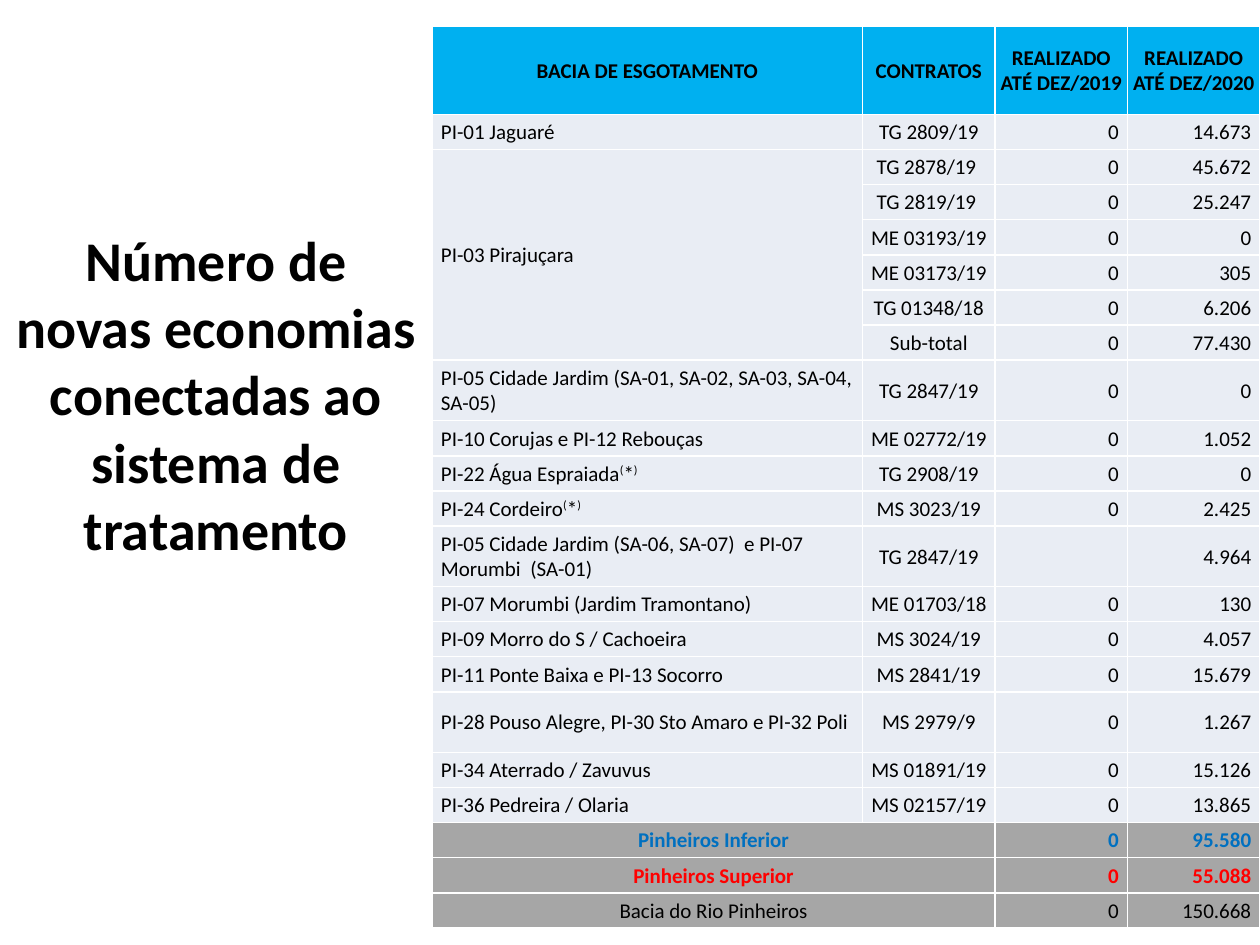
from dataclasses import dataclass
from typing import Any

from lxml.etree import SubElement
from pptx import Presentation
from pptx.dml.color import RGBColor
from pptx.enum.text import MSO_ANCHOR as Anchor, PP_ALIGN as Align
from pptx.oxml.ns import qn
from pptx.util import Emu, Inches, Pt

BLACK, WHITE = "000000", "FFFFFF"
HEADER, BODY, TOTAL = "00B0F0", "E9EDF4", "A6A6A6"
FOOTNOTE = (("(", True), ("*", False), (")", True))

HEADINGS = ("BACIA DE ESGOTAMENTO", "CONTRATOS", "REALIZADO ATÉ DEZ/2019", "REALIZADO ATÉ DEZ/2020")
BASINS = (
    ("PI-01 Jaguaré", "TG 2809/19", "0", "14.673"),
    ("PI-03 Pirajuçara", "TG 2878/19 ", "0", "45.672"),
    ("", "TG 2819/19 ", "0", "25.247"),
    ("", "ME 03193/19", "0", "0"),
    ("", "ME 03173/19", "0", "305"),
    ("", "TG 01348/18", "0", "6.206"),
    ("", "Sub-total", "0", "77.430"),
    ("PI-05 Cidade Jardim (SA-01, SA-02, SA-03, SA-04, SA-05)", "TG 2847/19", "0", "0"),
    ("PI-10 Corujas e PI-12 Rebouças", "ME 02772/19", "0", "1.052"),
    ((("PI-22 Água Espraiada", False), *FOOTNOTE), "TG 2908/19", "0", "0"),
    ((("PI-24 Cordeiro", False), *FOOTNOTE), "MS 3023/19", "0", "2.425"),
    ("PI-05 Cidade Jardim (SA-06, SA-07)  e PI-07 Morumbi  (SA-01)", "TG 2847/19", "", "4.964"),
    ("PI-07 Morumbi (Jardim Tramontano)", "ME 01703/18", "0", "130"),
    ("PI-09 Morro do S / Cachoeira", "MS 3024/19", "0", "4.057"),
    ("PI-11 Ponte Baixa e PI-13 Socorro", "MS 2841/19", "0", "15.679"),
    ("PI-28 Pouso Alegre, PI-30 Sto Amaro e PI-32 Poli", "MS 2979/9", "0", "1.267"),
    ("PI-34 Aterrado / Zavuvus", "MS 01891/19", "0", "15.126"),
    ("PI-36 Pedreira / Olaria", "MS 02157/19", "0", "13.865"),
)
TOTALS = (
    ("Pinheiros Inferior", "", "0", "95.580"),
    ("Pinheiros Superior", "", "0", "55.088"),
    ("Bacia do Rio Pinheiros", "", "0", "150.668"),
)
TOTAL_STYLES = (("0070C0", True), ("FF0000", True), (BLACK, False))
TALL_ROWS = (8, 12, 16)


def color(value):
    return RGBColor.from_string(value)


@dataclass
class SlideBuilder:
    slide: Any
    width: int
    height: int
    font: str = "Calibri"
    body_size: int = 12

    def box(self, left, top, width, height):
        return (Emu(round(left * self.width)), Emu(round(top * self.height)),
                Emu(round(width * self.width)), Emu(round(height * self.height)))

    def add_runs(self, frame, content, size, ink, bold, align):
        paragraph = frame.paragraphs[0]
        paragraph.alignment = align
        paragraph.font.size = Pt(size)
        runs = ((content, False),) if isinstance(content, str) else content
        for words, raised in runs:
            if not words:
                continue
            run = paragraph.add_run()
            run.text = words
            run.font.name, run.font.size, run.font.bold = self.font, Pt(size), bold
            run.font.color.rgb = color(ink)
            if raised:
                run._r.get_or_add_rPr().set("baseline", "30000")

    def title(self, words, area, size):
        frame = self.slide.shapes.add_textbox(*self.box(*area)).text_frame
        frame.word_wrap = True
        frame.vertical_anchor = Anchor.MIDDLE
        self.add_runs(frame, words, size, BLACK, True, Align.CENTER)

    def table(self, area, column_shares, row_weights):
        left, top, width, height = self.box(*area)
        grid = self.slide.shapes.add_table(
            len(row_weights), len(column_shares), left, top, width, height).table
        grid.first_row = grid.horz_banding = False
        for column, share in zip(grid.columns, column_shares):
            column.width = Emu(round(width * share))
        for row, weight in zip(grid.rows, row_weights):
            row.height = Emu(round(height * weight / sum(row_weights)))
        return grid

    def cell(self, cell, content, fill, align, ink=BLACK, bold=False):
        cell.vertical_anchor = Anchor.MIDDLE
        cell.margin_left = Inches(0.07 if align == Align.LEFT else 0.01)
        cell.margin_right = Inches(0.07 if align == Align.RIGHT else 0.01)
        cell.margin_top, cell.margin_bottom = Inches(0.01), 0
        self.add_runs(cell.text_frame, content, self.body_size, ink, bold, align)
        properties = cell._tc.get_or_add_tcPr()
        for side in ("a:lnL", "a:lnR", "a:lnT", "a:lnB"):
            border = SubElement(properties, qn(side), w=str(Pt(1)))
            SubElement(SubElement(border, qn("a:solidFill")), qn("a:srgbClr"), val=WHITE)
        cell.fill.solid()
        cell.fill.fore_color.rgb = color(fill)

    def row(self, grid, index, contents, fill, aligns, ink=BLACK, bold=False):
        for column, (content, align) in enumerate(zip(contents, aligns)):
            self.cell(grid.cell(index, column), content, fill, align, ink, bold)


def main():
    deck = Presentation()
    deck.slide_width, deck.slide_height = Inches(10), Inches(7.5)
    slide = deck.slides.add_slide(deck.slide_layouts[6])
    builder = SlideBuilder(slide, deck.slide_width, deck.slide_height)

    builder.title("Número de novas economias conectadas ao sistema de tratamento",
                  (0, 0.04, 0.343, 0.753), 32)

    row_count = 1 + len(BASINS) + len(TOTALS)
    weights = [2.5] + [1.72 if row in TALL_ROWS else 1 for row in range(1, row_count)]
    grid = builder.table((0.343, 0.028, 0.657, 0.955), (0.52, 0.16, 0.16, 0.16), weights)

    centered = (Align.CENTER,) * 4
    builder.row(grid, 0, HEADINGS, HEADER, centered, bold=True)
    for index, basin in enumerate(BASINS, 1):
        builder.row(grid, index, basin, BODY,
                    (Align.LEFT, Align.CENTER, Align.RIGHT, Align.RIGHT))
    first_total = 1 + len(BASINS)
    for index, (total, (ink, bold)) in enumerate(zip(TOTALS, TOTAL_STYLES), first_total):
        builder.row(grid, index, total, TOTAL,
                    (Align.CENTER, Align.CENTER, Align.RIGHT, Align.RIGHT), ink, bold)
        grid.cell(index, 0).merge(grid.cell(index, 1))
    grid.cell(2, 0).merge(grid.cell(7, 0))

    deck.save("out.pptx")


if __name__ == "__main__":
    main()
